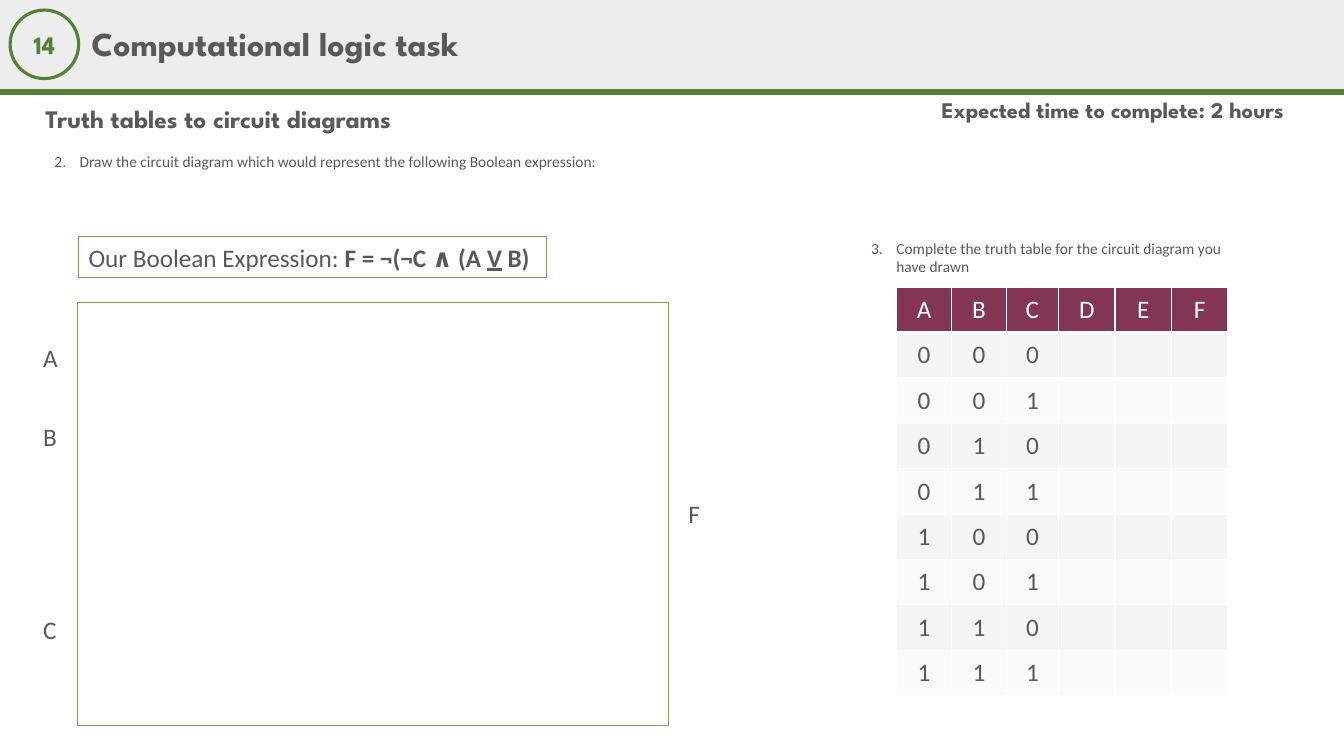
from dataclasses import dataclass
from itertools import product

from lxml import etree
from pptx import Presentation, util as u
from pptx.dml.color import RGBColor
from pptx.enum import shapes, text
from pptx.oxml import ns

PX = 9144  # EMU in one px, 100 px to the inch
COLOURS = {
    "band": "EDEDED", "green": "538135", "frame": "70AD47", "grey": "595959",
    "white": "FFFFFF", "header": "823554", "odd": "F6F5F5", "even": "FAFAFA",
}
HEADING, BODY = "League Spartan", "Calibri"
TOP, MIDDLE = text.MSO_ANCHOR.TOP, text.MSO_ANCHOR.MIDDLE
LEFT, CENTER = text.PP_ALIGN.LEFT, text.PP_ALIGN.CENTER
Box = tuple[int, int, int, int]


@dataclass
class Run:
    text: str
    size: int = 18
    font: str = BODY
    colour: str = "grey"
    bold: bool = False
    underline: bool = False


@dataclass
class Heading:
    placeholder: int
    box: Box
    text: str
    size: int
    anchor: text.MSO_ANCHOR = MIDDLE


@dataclass
class Question:
    placeholder: int
    box: Box
    number: int
    text: str


@dataclass
class Label:
    text: str
    box: Box


HEADINGS = [
    Heading(0, (81, 9, 1031, 73), "Computational logic task", 24),
    Heading(1, (35, 99, 571, 40), "Truth tables to circuit diagrams", 18),
    Heading(3, (924, 93, 409, 40), "Expected time to complete: 2 hours", 16, TOP),
]
QUESTIONS = [
    Question(2, (44, 146, 623, 29), 2,
             "Draw the circuit diagram which would represent the following Boolean expression:"),
    Question(4, (854, 232, 385, 47), 3,
             "Complete the truth table for the circuit diagram you have drawn"),
]
LABELS = [
    Label("A", (33, 335, 35, 40)),
    Label("B", (33, 413, 34, 40)),
    Label("C", (33, 605, 34, 40)),
    Label("F", (673, 489, 32, 40)),
]
EXPRESSION = [
    Run("Our Boolean Expression: "),
    Run("F = ¬(¬C ∧ (A ", bold=True),
    Run("V", bold=True, underline=True),
    Run(" B)", bold=True),
]
COLUMN_WIDTHS = [55, 54, 52, 56, 56, 56]
ROW_HEIGHT = 45


def colour(name: str) -> RGBColor:
    return RGBColor.from_string(COLOURS[name])


def emu(box: Box) -> list[int]:
    return [length * PX for length in box]


def place(shape, box: Box) -> None:
    shape.left, shape.top, shape.width, shape.height = emu(box)


def add_runs(paragraph, runs: list[Run], align=LEFT) -> None:
    paragraph.alignment = align
    for item in runs:
        run = paragraph.add_run()
        run.text = item.text
        run.font.name, run.font.size = item.font, u.Pt(item.size)
        run.font.bold, run.font.underline = item.bold, item.underline
        run.font.color.rgb = colour(item.colour)


def set_frame(frame, anchor=TOP, grow: bool = False, wrap: bool = True) -> None:
    frame.word_wrap = wrap
    frame.vertical_anchor = anchor
    fit = text.MSO_AUTO_SIZE
    frame.auto_size = fit.SHAPE_TO_FIT_TEXT if grow else fit.NONE


def add_outline(slide, preset, box: Box, line: str | None, width: float = 0,
                fill: str | None = None):
    shape = slide.shapes.add_shape(preset, *emu(box))
    shape.shadow.inherit = False
    if fill:
        shape.fill.solid()
        shape.fill.fore_color.rgb = colour(fill)
    else:
        shape.fill.background()
    if line:
        shape.line.color.rgb = colour(line)
        shape.line.width = u.Pt(width)
    else:
        shape.line.fill.background()
    return shape


def add_header_band(slide) -> None:
    """Draw the band and its rule behind the title."""
    band = add_outline(slide, shapes.MSO_SHAPE.RECTANGLE, (0, 0, 1333, 91), None, fill="band")
    rule = slide.shapes.add_connector(
        shapes.MSO_CONNECTOR.STRAIGHT, *emu((0, 91, 1333, 91)))
    rule.line.color.rgb = colour("green")
    rule.line.width = u.Pt(4.5)
    etree.SubElement(rule.element.spPr, ns.qn("a:effectLst"))
    for part in (band, rule):
        slide.shapes.title.element.addprevious(part.element)


def fill_heading(slide, heading: Heading) -> None:
    shape = slide.placeholders[heading.placeholder]
    place(shape, heading.box)
    set_frame(shape.text_frame, heading.anchor)
    paragraph = shape.text_frame.paragraphs[0]
    paragraph.line_spacing, paragraph.space_before = 0.9, u.Pt(0)
    add_runs(paragraph, [Run(heading.text, heading.size, HEADING, bold=True)])


def fill_question(slide, question: Question) -> None:
    shape = slide.placeholders[question.placeholder]
    place(shape, question.box)
    set_frame(shape.text_frame, grow=True)
    paragraph = shape.text_frame.paragraphs[0]
    paragraph.space_before = u.Pt(0)
    properties = paragraph._p.get_or_add_pPr()
    properties.set("marL", str(25 * PX))
    properties.set("indent", str(-25 * PX))
    etree.SubElement(properties, ns.qn("a:buFont"), typeface="+mj-lt")
    etree.SubElement(properties, ns.qn("a:buAutoNum"),
                     type="arabicPeriod", startAt=str(question.number))
    add_runs(paragraph, [Run(question.text, 11)])


def add_label(slide, label: Label) -> None:
    shape = slide.shapes.add_textbox(*emu(label.box))
    set_frame(shape.text_frame, grow=True, wrap=False)
    add_runs(shape.text_frame.paragraphs[0], [Run(label.text)])


def set_borders(cell, bottom: float) -> None:
    properties = cell._tc.get_or_add_tcPr()
    for side, width in (("L", 1), ("R", 1), ("T", 1), ("B", bottom)):
        line = etree.SubElement(properties, ns.qn(f"a:ln{side}"), w=str(u.Pt(width)))
        fill = etree.SubElement(line, ns.qn("a:solidFill"))
        etree.SubElement(fill, ns.qn("a:srgbClr"), val=COLOURS["white"])


def add_truth_table(slide) -> None:
    rows = [tuple("ABCDEF")] + [bits + ("",) * 3 for bits in product("01", repeat=3)]
    box = (889, 285, sum(COLUMN_WIDTHS), ROW_HEIGHT * len(rows))
    table = slide.shapes.add_table(len(rows), len(COLUMN_WIDTHS), *emu(box)).table
    table.horz_banding = False
    for column, width in zip(table.columns, COLUMN_WIDTHS):
        column.width = width * PX
    for r, values in enumerate(rows):
        table.rows[r].height = ROW_HEIGHT * PX
        fill = "header" if r == 0 else "odd" if r % 2 else "even"
        for c, value in enumerate(values):
            cell = table.cell(r, c)
            set_borders(cell, bottom=1 if r else 3)
            cell.fill.solid()
            cell.fill.fore_color.rgb = colour(fill)
            cell.vertical_anchor = MIDDLE
            if value:
                add_runs(cell.text_frame.paragraphs[0],
                         [Run(value, colour="grey" if r else "white")], CENTER)


def main() -> None:
    presentation = Presentation()
    presentation.slide_width, presentation.slide_height = 1333 * PX, 750 * PX
    slide = presentation.slides.add_slide(presentation.slide_layouts.get_by_name("Comparison"))
    add_header_band(slide)
    for heading in HEADINGS:
        fill_heading(slide, heading)
    for question in QUESTIONS:
        fill_question(slide, question)
    badge = add_outline(slide, shapes.MSO_SHAPE.OVAL, (10, 10, 68, 68), "green", 2.25)
    set_frame(badge.text_frame, MIDDLE)
    add_runs(badge.text_frame.paragraphs[0], [Run("14", 18, HEADING, "green", True)], CENTER)
    expression = add_outline(
        slide, shapes.MSO_SHAPE.RECTANGLE, (78, 235, 464, 40), "frame", 0.75)
    set_frame(expression.text_frame, grow=True)
    add_runs(expression.text_frame.paragraphs[0], EXPRESSION)
    for label in LABELS:
        add_label(slide, label)
    add_truth_table(slide)
    add_outline(slide, shapes.MSO_SHAPE.RECTANGLE, (77, 300, 586, 420), "frame", 1)
    presentation.save("out.pptx")


if __name__ == "__main__":
    main()
